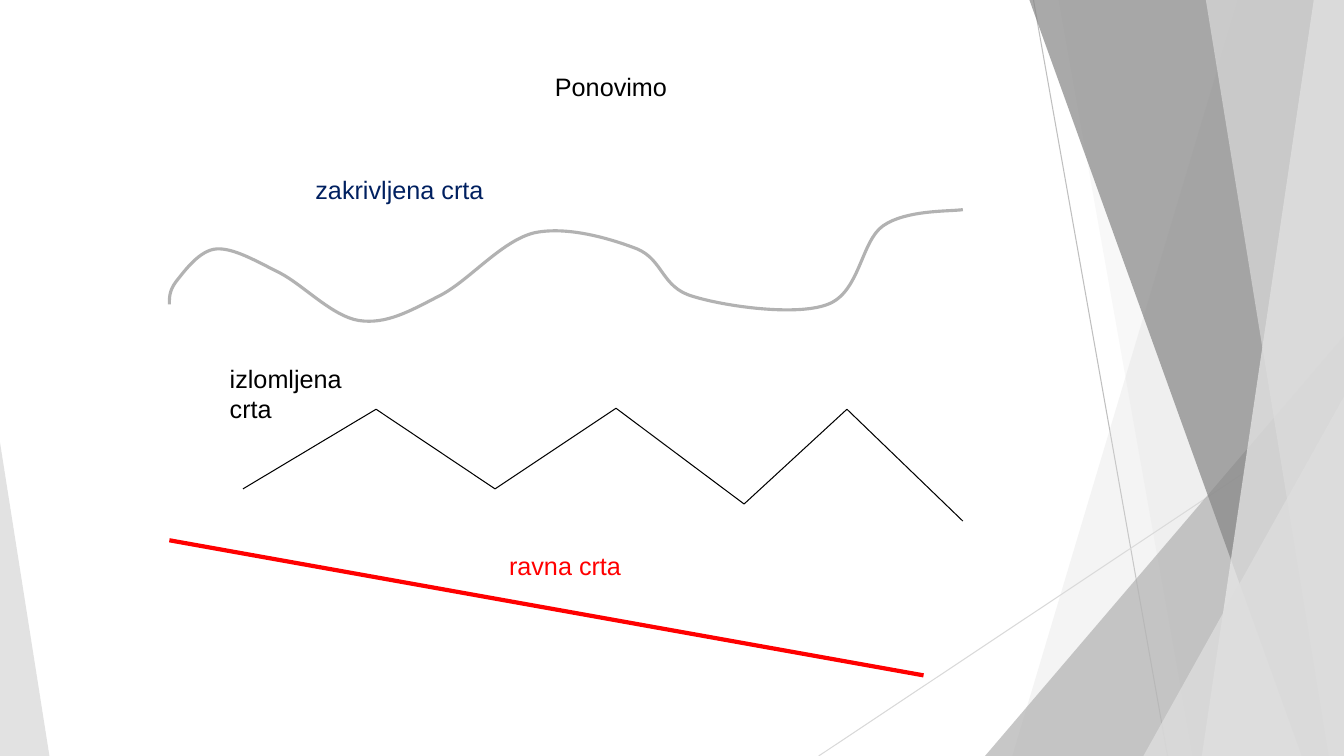
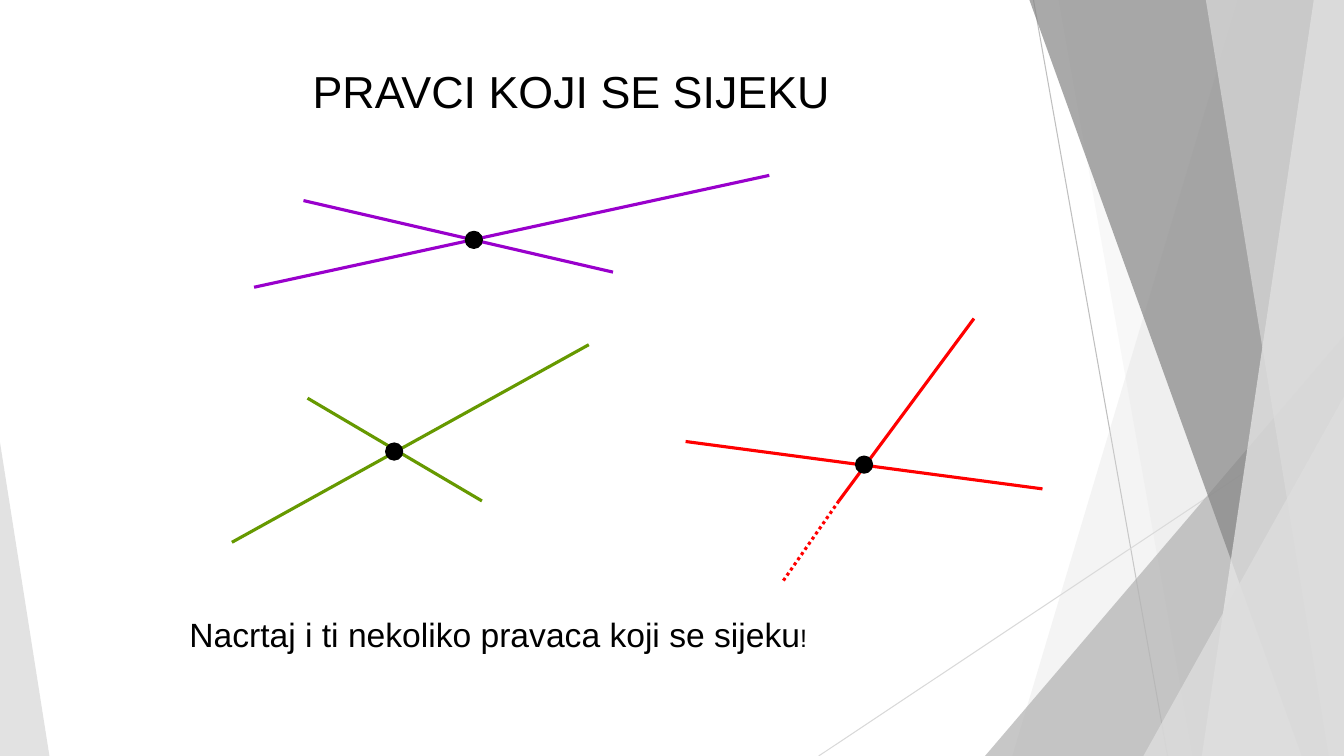
from itertools import pairwise

from lxml import etree
from pptx import Presentation
from pptx.dml.color import RGBColor
from pptx.enum import dml, shapes, text
from pptx.oxml.ns import qn
from pptx.util import Inches, Pt

WIDE, HIGH = 13.33, 7.5
FONT = "Arial"
BLACK = RGBColor(0x00, 0x00, 0x00)
NAVY = RGBColor(0x00, 0x20, 0x60)
RED = RGBColor(0xFF, 0x00, 0x00)
PURPLE = RGBColor(0x99, 0x00, 0xCC)
GREEN = RGBColor(0x66, 0x99, 0x00)
DARK = RGBColor(0x85, 0x85, 0x85)
GREY = RGBColor(0xB2, 0xB2, 0xB2)
RULE = RGBColor(0xBF, 0xBF, 0xBF)
FAINT = RGBColor(0xD9, 0xD9, 0xD9)
LIGHT = RGBColor(0xDD, 0xDD, 0xDD)
PALE = RGBColor(0xEB, 0xEB, 0xEB)

WAVE = [
    (0, .94),
    (0, .87), (0, .8), (.07, .71),
    (.15, .61), (.3, .4), (.47, .39),
    (.64, .38), (.86, .51), (1.1, .63),
    (1.33, .75), (1.62, 1.06), (1.88, 1.1),
    (2.15, 1.14), (2.38, 1.01), (2.67, .86),
    (2.96, .72), (3.29, .31), (3.62, .23),
    (3.95, .16), (4.38, .29), (4.64, .39),
    (4.9, .5), (4.88, .77), (5.19, .86),
    (5.51, .96), (6.22, 1.06), (6.53, .94),
    (6.85, .82), (6.86, .31), (7.08, .16),
    (7.31, 0), (7.74, .02), (7.87, 0),
]
ZIGZAG = [(0, .8), (1.32, .01), (2.5, .8), (3.7, 0),
          (4.97, .95), (5.99, .01), (7.14, 1.12)]


def line(slide, start, end, color, width, dash=None):
    """Draw a straight line without a shadow."""
    part = slide.shapes.add_connector(
        shapes.MSO_CONNECTOR.STRAIGHT, *map(Inches, (*start, *end)))
    part.line.color.rgb = color
    part.line.width = Pt(width)
    if dash:
        part.line.dash_style = dash
    etree.SubElement(part.element.spPr, qn("a:effectLst"))
    return part


def outline(slide, points, close):
    """Draw a freeform through points given in inches."""
    first, *rest = [(Inches(x), Inches(y)) for x, y in points]
    build = slide.shapes.build_freeform(*first)
    build.add_line_segments(rest, close=close)
    part = build.convert_to_shape()
    part.shadow.inherit = False
    return part


def tint(part, color, alpha):
    """Fill a shape with a see-through colour and no line."""
    part.fill.solid()
    part.fill.fore_color.rgb = color
    part.line.fill.background()
    mark = part.element.spPr.find(".//" + qn("a:srgbClr"))
    etree.SubElement(mark, qn("a:alpha"), val=str(alpha * 1000))
    return part


def band(slide, top, base, color, alpha):
    """Fill the area from a slanted edge to the right of the slide."""
    edge = [(top, 0), (WIDE, 0), (WIDE, HIGH), (base, HIGH)]
    return tint(outline(slide, edge, True), color, alpha)


def wedge(slide, left, top, wide, peak, color, alpha):
    """Draw a triangle standing on the foot of the slide."""
    part = slide.shapes.add_shape(
        shapes.MSO_SHAPE.ISOSCELES_TRIANGLE,
        *map(Inches, (left, top, wide, HIGH - top)))
    part.adjustments[0] = peak
    part.shadow.inherit = False
    return tint(part, color, alpha)


def facets(deck, slide):
    """Draw the shared backdrop and move it to the slide master."""
    parts = [
        line(slide, (10.25, 0), (11.58, HIGH), RULE, .75),
        line(slide, (WIDE, 4.03), (8.12, HIGH), FAINT, .75),
        band(slide, 12.28, 10.04, LIGHT, 30),
        band(slide, 10.5, 11.83, LIGHT, 20),
        wedge(slide, 9.77, 3.33, 3.56, 1, GREY, 72),
        band(slide, 10.21, 12.91, DARK, 70),
        band(slide, 13.03, 11.92, PALE, 70),
        band(slide, 11.96, 13.18, LIGHT, 65),
        wedge(slide, 11.34, 3.93, 1.99, 1, LIGHT, 80),
        wedge(slide, 0, 4.39, .49, 0, LIGHT, 85),
    ]
    tree = deck.slide_master.element.cSld.spTree
    for part in parts:
        tree.append(part.element)


def write(part, box, runs, color=BLACK, align=text.PP_ALIGN.LEFT, wrap=False):
    """Place a text shape in a box and fill it run by run."""
    part.left, part.top, part.width, part.height = map(Inches, box)
    frame = part.text_frame
    frame.word_wrap = wrap
    frame.auto_size = text.MSO_AUTO_SIZE.SHAPE_TO_FIT_TEXT
    frame.vertical_anchor = text.MSO_ANCHOR.TOP
    para = frame.paragraphs[0]
    para.alignment = align
    for words, size in runs:
        run = para.add_run()
        run.text = words
        run.font.name = FONT
        run.font.size = Pt(size)
        run.font.color.rgb = color


def label(slide, box, *runs, **style):
    """Add a text box."""
    write(slide.shapes.add_textbox(*map(Inches, box)), box, runs, **style)


def wave(slide, left, top):
    """Draw the curved line from its Bezier points."""
    part = outline(slide, [(left + x, top + y) for x, y in WAVE], False)
    part.fill.background()
    part.line.color.rgb = GREY
    part.line.width = Pt(2.25)
    steps = part.element.spPr.findall(".//" + qn("a:lnTo"))
    for i in range(0, len(steps), 3):
        curve = etree.Element(qn("a:cubicBezTo"))
        steps[i].addprevious(curve)
        for step in steps[i:i + 3]:
            curve.append(step[0])
            step.getparent().remove(step)


def zigzag(slide, left, top):
    """Draw the broken line."""
    points = [(left + x, top + y) for x, y in ZIGZAG]
    for start, end in pairwise(points):
        line(slide, start, end, BLACK, .75)


def cross(slide, x, y, color, *lines):
    """Draw lines around a meeting point and mark it with a dot."""
    for (ax, ay), (bx, by), *dash in lines:
        line(slide, (x + ax, y + ay), (x + bx, y + by), color, 2.25, *dash)
    size = .16
    dot = slide.shapes.add_shape(
        shapes.MSO_SHAPE.OVAL,
        *map(Inches, (x - size / 2, y - size / 2, size, size)))
    dot.shadow.inherit = False
    dot.fill.solid()
    dot.fill.fore_color.rgb = BLACK
    dot.line.color.rgb = BLACK
    dot.line.width = Pt(1.5)


def review(slide):
    """Build the slide that reviews three kinds of line."""
    write(slide.shapes.title, (5.4, .66, 1.32, .4), [("Ponovimo", 18)],
          align=text.PP_ALIGN.CENTER)
    line(slide, (1.68, 5.36), (9.16, 6.7), RED, 3)
    label(slide, (3.03, 1.68, 1.89, .4), ("zakrivljena crta", 18), color=NAVY)
    label(slide, (4.95, 5.41, 1.32, .4), ("ravna crta", 18), color=RED)
    wave(slide, 1.68, 2.08)
    zigzag(slide, 2.41, 4.05)
    label(slide, (2.18, 3.55, 1.38, .71), ("izlomljena crta", 18), wrap=True)


def meet(slide):
    """Build the slide of lines that intersect."""
    write(slide.shapes.title, (3, .58, 5.49, .63),
          [("PRAVCI KOJI SE SIJEKU", 32)])
    cross(slide, 4.7, 2.38, PURPLE,
          ((-2.18, .47), (2.93, -.64)),
          ((-1.69, -.39), (1.38, .32)))
    cross(slide, 3.91, 4.48, GREEN,
          ((-1.61, .9), (1.93, -1.06)),
          ((-.86, -.53), (.87, .49)))
    cross(slide, 8.57, 4.61, RED,
          ((-1.77, -.23), (1.77, .24)),
          ((-.25, .36), (1.09, -1.45)),
          ((-.8, 1.15), (-.25, .36), dml.MSO_LINE.ROUND_DOT))
    label(slide, (1.78, 6.04, 6.4, .5),
          ("Nacrtaj i ti nekoliko pravaca koji se sijeku", 24), ("!", 18))


def main():
    """Build and save the deck."""
    deck = Presentation()
    deck.slide_width, deck.slide_height = Inches(WIDE), Inches(HIGH)
    first, second = [deck.slides.add_slide(deck.slide_layouts[5])
                     for _ in range(2)]
    facets(deck, first)
    review(first)
    meet(second)
    deck.save("out.pptx")


if __name__ == "__main__":
    main()
